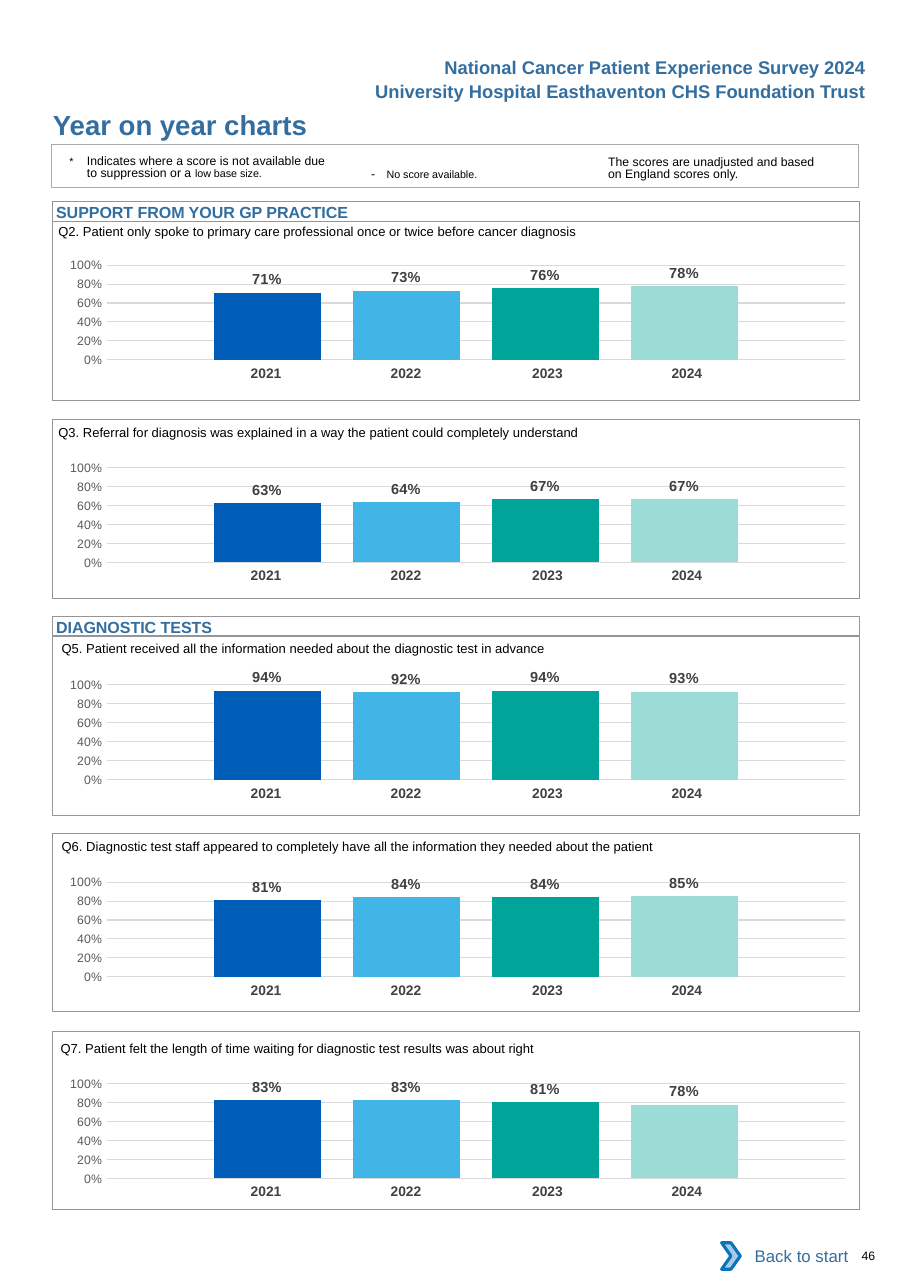
from lxml import etree
from pptx import Presentation
from pptx.chart.data import CategoryChartData
from pptx.dml.color import RGBColor
from pptx.enum.chart import XL_CHART_TYPE, XL_LABEL_POSITION, XL_TICK_MARK
from pptx.enum.shapes import MSO_SHAPE
from pptx.enum.text import MSO_ANCHOR, PP_ALIGN
from pptx.oxml import parse_xml
from pptx.oxml.ns import nsdecls, qn
from pptx.util import Inches, Pt

BLUE, GREY, BLACK = "336E9F", "939598", "000000"
YEARS = ("2021", "2022", "2023", "2024")
YEAR_COLORS = ("005EB8", "41B6E6", "00A499", "9CDCD7")
YEAR_WIDTHS = (1.27, 1.27, 1.34, 1.27)
YEAR_RIGHT_MARGINS = (0, 0, 0.04, 0.12)
PANEL_LEFT, PANEL_WIDTH, PANEL_HEIGHT = 0.48, 7.32, 1.62
CHART_LEFT, CHART_HEIGHT, YEARS_OFFSET = 0.39, 1.29, 1.05
PLOT_AREA = {"x": 0.079, "y": 0.145, "w": 0.915, "h": 0.666}
NO_TABLE_STYLE = "{2D5ABB26-0587-4C30-8999-92F81FD0307C}"

TITLE = "Year on year charts"
HEADERS = [
    ("National Cancer Patient Experience Survey 2024", 0.46),
    ("University Hospital Easthaventon CHS Foundation Trust", 0.68),
]
SECTIONS = [("SUPPORT FROM YOUR GP PRACTICE", 1.83), ("DIAGNOSTIC TESTS", 5.59)]
# question, its left and top, panel top, chart top, scores
PANELS = [
    ("Q2. Patient only spoke to primary care professional once or twice before cancer diagnosis",
     0.53, 2.03, 2.01, 2.22, (0.71, 0.73, 0.76, 0.78)),
    ("Q3. Referral for diagnosis was explained in a way the patient could completely understand",
     0.53, 3.85, 3.81, 4.06, (0.63, 0.64, 0.67, 0.67)),
    ("Q5. Patient received all the information needed about the diagnostic test in advance",
     0.56, 5.81, 5.78, 6.03, (0.94, 0.92, 0.94, 0.93)),
    ("Q6. Diagnostic test staff appeared to completely have all the information they needed "
     "about the patient",
     0.56, 7.61, 7.56, 7.82, (0.81, 0.84, 0.84, 0.85)),
    ("Q7. Patient felt the length of time waiting for diagnostic test results was about right",
     0.55, 9.44, 9.36, 9.65, (0.83, 0.83, 0.81, 0.78)),
]
# runs as (text, size), left, top, width, hanging indent
NOTES = [
    ([("*\t", 7), ("Indicates where a score is not available due to suppression or a ", 8),
      ("low base size.", 7)], 0.63, 1.41, 2.36, 0.16),
    ([("-\t", 8), ("No score available.", 7)], 3.37, 1.53, 1.6, 0.14),
    ([("The scores are unadjusted and based on England scores only.", 8)], 5.52, 1.42, 1.95, 0),
]


def rgb(value):
    return RGBColor.from_string(value)


def style_font(font, size, color, bold=False):
    font.name, font.size, font.bold = "Arial", Pt(size), bold
    font.color.rgb = rgb(color)


def clear_margins(text_frame):
    text_frame.margin_left = text_frame.margin_right = 0
    text_frame.margin_top = text_frame.margin_bottom = 0


def add_text(slide, text, left, top, width, height, size, color=BLACK, bold=False, align=None):
    text_frame = slide.shapes.add_textbox(
        Inches(left), Inches(top), Inches(width), Inches(height)).text_frame
    text_frame.word_wrap = True
    clear_margins(text_frame)
    text_frame.text = text
    paragraph = text_frame.paragraphs[0]
    paragraph.alignment = align
    style_font(paragraph.runs[0].font, size, color, bold)


def add_box(slide, kind, left, top, width, height, fill=None, line=None, line_width=0.5):
    shape = slide.shapes.add_shape(
        kind, Inches(left), Inches(top), Inches(width), Inches(height))
    shape.shadow.inherit = False
    for part, color in ((shape.fill, fill), (shape.line.fill, line)):
        if color:
            part.solid()
            part.fore_color.rgb = rgb(color)
        else:
            part.background()
    if line:
        shape.line.width = Pt(line_width)
    return shape


def add_note(slide, runs, left, top, width, indent):
    text_frame = slide.shapes.add_textbox(
        Inches(left), Inches(top), Inches(width), Inches(0.25)).text_frame
    text_frame.word_wrap = True
    clear_margins(text_frame)
    paragraph = text_frame.paragraphs[0]
    paragraph.line_spacing = Pt(8.1)
    for text, size in runs:
        run = paragraph.add_run()
        run.text = text
        style_font(run.font, size, BLACK)
    properties = paragraph._p.get_or_add_pPr()
    properties.set("marL", str(Inches(indent)))
    properties.set("indent", str(-Inches(indent)))


def add_years(slide, top):
    table = slide.shapes.add_table(1, len(YEARS), Inches(1.73), Inches(top),
                                   Inches(sum(YEAR_WIDTHS)), Inches(0.27)).table
    table.first_row = table.horz_banding = False
    table._tbl.tblPr.find(qn("a:tableStyleId")).text = NO_TABLE_STYLE
    for column, year in enumerate(YEARS):
        table.columns[column].width = Inches(YEAR_WIDTHS[column])
        cell = table.cell(0, column)
        cell.fill.background()
        cell.margin_left = Inches(0.1)
        cell.margin_right = Inches(YEAR_RIGHT_MARGINS[column])
        cell.text_frame.text = year
        paragraph = cell.text_frame.paragraphs[0]
        paragraph.alignment = PP_ALIGN.CENTER
        style_font(paragraph.runs[0].font, 9, "414042", True)


def set_plot_area(chart):
    """Fix the inner plot area and leave the chart background clear."""
    plot_area = chart.element.chart.plotArea
    for layout in plot_area.findall(qn("c:layout")):
        plot_area.remove(layout)
    layout = parse_xml(f"<c:layout {nsdecls('c')}/>")
    manual = etree.SubElement(layout, qn("c:manualLayout"))
    settings = {"layoutTarget": "inner", "xMode": "edge", "yMode": "edge", **PLOT_AREA}
    for name, value in settings.items():
        etree.SubElement(manual, qn(f"c:{name}")).set("val", str(value))
    plot_area.insert(0, layout)
    chart.element.chart.addnext(parse_xml(
        f"<c:spPr {nsdecls('c', 'a')}><a:noFill/><a:ln><a:noFill/></a:ln></c:spPr>"))


def add_scores(slide, top, scores):
    data = CategoryChartData(number_format="0%")
    data.categories = ["1"]
    for year, score in zip(YEARS, scores):
        data.add_series(year, [score])
    chart = slide.shapes.add_chart(
        XL_CHART_TYPE.COLUMN_CLUSTERED, Inches(CHART_LEFT), Inches(top),
        Inches(PANEL_WIDTH), Inches(CHART_HEIGHT), data).chart
    chart.has_title = chart.has_legend = False
    style_font(chart.font, 10, BLACK)
    chart.category_axis.visible = False
    axis = chart.value_axis
    axis.minimum_scale, axis.maximum_scale, axis.major_unit = 0, 1, 0.2
    axis.major_tick_mark = axis.minor_tick_mark = XL_TICK_MARK.NONE
    axis.format.line.fill.background()
    axis.major_gridlines.format.line.color.rgb = rgb("D9D9D9")
    axis.major_gridlines.format.line.width = Pt(0.75)
    axis.tick_labels.number_format = "0%"
    axis.tick_labels.number_format_is_linked = False
    style_font(axis.tick_labels.font, 8, "595959")
    plot = chart.plots[0]
    plot.gap_width, plot.overlap, plot.vary_by_categories = 200, -30, False
    for series, color in zip(plot.series, YEAR_COLORS):
        series.format.fill.solid()
        series.format.fill.fore_color.rgb = rgb(color)
        labels = series.data_labels
        labels.show_value = True
        labels.position = XL_LABEL_POSITION.OUTSIDE_END
        labels.number_format, labels.number_format_is_linked = "0%", False
        style_font(labels.font, 9.5, "404040", True)
    set_plot_area(chart)


def main():
    presentation = Presentation()
    presentation.slide_width, presentation.slide_height = Inches(8.26), Inches(11.69)
    slide = presentation.slides.add_slide(presentation.slide_layouts[5])

    title = slide.shapes.title
    title.left, title.top, title.width, title.height = map(Inches, (0.48, 0.98, 4.5, 0.3))
    title.text_frame.text = TITLE
    clear_margins(title.text_frame)
    title.text_frame.vertical_anchor = MSO_ANCHOR.TOP
    title.text_frame.paragraphs[0].alignment = PP_ALIGN.LEFT
    style_font(title.text_frame.paragraphs[0].runs[0].font, 18, BLUE, True)

    for text, top in HEADERS:
        add_text(slide, text, 2.86, top + 0.05, 5, 0.2, 12, BLUE, True, PP_ALIGN.RIGHT)
    add_box(slide, MSO_SHAPE.RECTANGLE, 0.47, 1.31, PANEL_WIDTH, 0.39, None, "A9AAAD", 0.75)
    for note in NOTES:
        add_note(slide, *note)
    for text, top in SECTIONS:
        add_box(slide, MSO_SHAPE.RECTANGLE, PANEL_LEFT, top, PANEL_WIDTH, 0.18, None, GREY)
        add_text(slide, text, PANEL_LEFT + 0.03, top + 0.01, 7.2, 0.17, 10.5, BLUE, True)
    for question, left, question_top, panel_top, chart_top, scores in PANELS:
        add_text(slide, question, left, question_top, 7.2, 0.15, 8.5)
        add_years(slide, chart_top + YEARS_OFFSET)
        add_scores(slide, chart_top, scores)
        add_box(slide, MSO_SHAPE.RECTANGLE, PANEL_LEFT, panel_top,
                PANEL_WIDTH, PANEL_HEIGHT, None, GREY)

    back = add_box(slide, MSO_SHAPE.RECTANGLE, 6.62, 11.19, 1.18, 0.42, "FFFFFF")
    back.text_frame.text = "Back to start"
    back.text_frame.vertical_anchor = MSO_ANCHOR.MIDDLE
    back.text_frame.paragraphs[0].alignment = PP_ALIGN.RIGHT
    style_font(back.text_frame.paragraphs[0].runs[0].font, 11, BLUE)
    add_box(slide, MSO_SHAPE.CHEVRON, 6.55, 11.28, 0.17, 0.24, "A8C7E9", "0A74BB", 2)
    add_text(slide, "46", 7.82, 11.33, 0.4, 0.13, 8)
    presentation.save("out.pptx")


if __name__ == "__main__":
    main()
